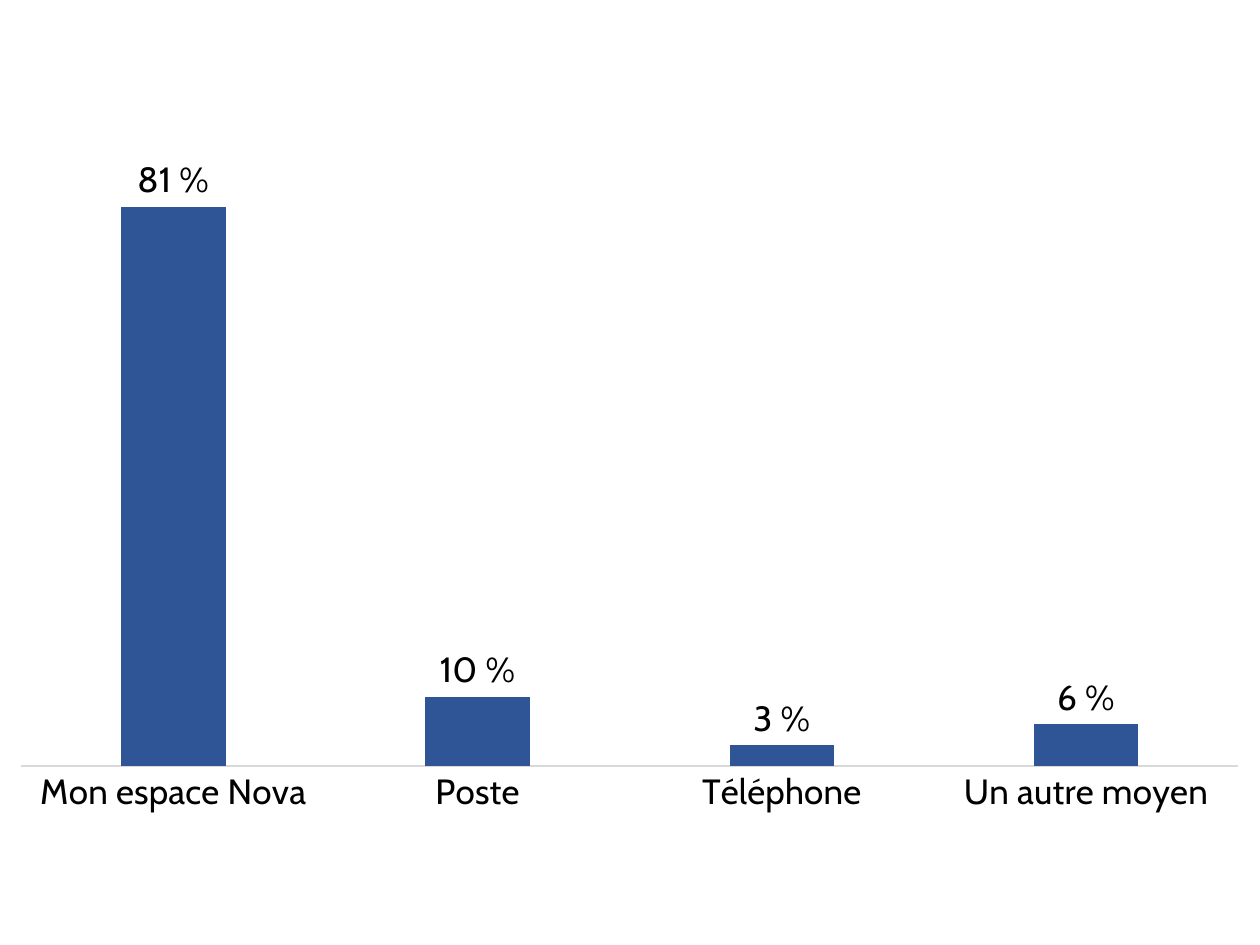
from lxml import etree
from pptx import Presentation
from pptx.chart.data import CategoryChartData as ChartData
from pptx.dml.color import RGBColor
from pptx.enum.chart import XL_CHART_TYPE as ChartType
from pptx.enum.chart import XL_LABEL_POSITION as LabelPosition
from pptx.enum.chart import XL_TICK_MARK as TickMark
from pptx.oxml.ns import qn
from pptx.util import Pt

# Content
SHARES = [
    ("Mon espace Nova", 0.81),
    ("Poste", 0.10),
    ("Téléphone", 0.03),
    ("Un autre moyen", 0.06),
]
FONT = "Cabin"
BLACK, BLUE, GREY = "000000", "2F5597", "D9D9D9"
PLOT_AREA = {"x": 0, "y": 0.08, "w": 1, "h": 0.8}  # fractions of the chart


def color(value):
    return RGBColor.from_string(value)


def format_font(font, size):
    font.name, font.size, font.bold = FONT, Pt(size), False
    font.color.rgb = color(BLACK)


def place_plot(chart, fractions):
    """Fix the inner plot area at the given fractions of the chart."""
    plot_area = chart._chartSpace.chart.plotArea
    for old in plot_area.findall(qn("c:layout")):
        plot_area.remove(old)
    layout = etree.Element(qn("c:layout"))
    manual = etree.SubElement(layout, qn("c:manualLayout"))
    settings = [("layoutTarget", "inner"), ("xMode", "edge"), ("yMode", "edge")]
    for tag, value in settings + list(fractions.items()):
        etree.SubElement(manual, qn(f"c:{tag}")).set("val", str(value))
    plot_area.insert(0, layout)


def add_share_chart(page, shares):
    data = ChartData(number_format="0%")
    data.categories = [name for name, _ in shares]
    data.add_series("Series 1", [share for _, share in shares])
    chart = page.shapes.add_chart(
        ChartType.COLUMN_CLUSTERED, Pt(11.8), Pt(47), Pt(696.2), Pt(444), data
    ).chart
    chart.has_legend = chart.has_title = False
    format_font(chart.font, 10)
    place_plot(chart, PLOT_AREA)

    # Columns
    plot = chart.plots[0]
    plot.vary_by_categories = False
    plot.gap_width, plot.overlap = 191, -27
    columns = plot.series[0]
    columns.format.fill.solid()
    columns.format.fill.fore_color.rgb = color(BLUE)

    # Value labels
    labels = columns.data_labels
    labels.show_value = True
    labels.position = LabelPosition.OUTSIDE_END
    labels.number_format, labels.number_format_is_linked = "0 %", False
    format_font(labels.font, 20)

    # Axes
    names = chart.category_axis
    names.major_tick_mark = names.minor_tick_mark = TickMark.NONE
    names.format.line.color.rgb = color(GREY)
    names.format.line.width = Pt(0.75)
    format_font(names.tick_labels.font, 20)
    values = chart.value_axis
    values.minimum_scale, values.maximum_scale = 0, 0.9
    values.has_major_gridlines = False
    values.visible = False


deck = Presentation()
deck.slide_width, deck.slide_height = Pt(720), Pt(540)
page = deck.slides.add_slide(deck.slide_layouts[6])
add_share_chart(page, SHARES)
deck.save("out.pptx")
